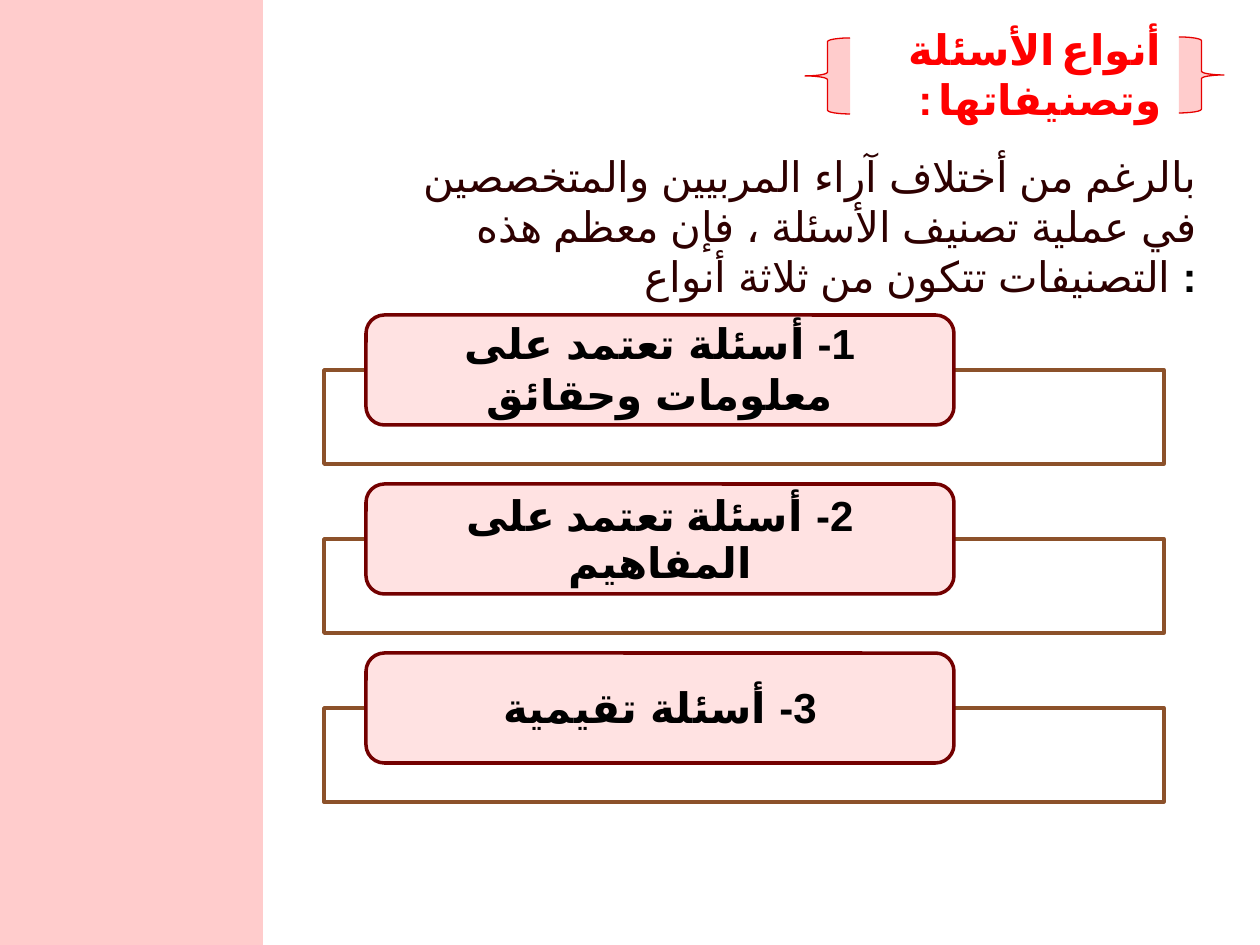
from pptx import Presentation
from pptx.dml.color import RGBColor
from pptx.enum.lang import MSO_LANGUAGE_ID as Language
from pptx.enum.shapes import MSO_SHAPE as Shape
from pptx.enum.text import MSO_ANCHOR as Anchor, MSO_AUTO_SIZE as AutoSize, PP_ALIGN as Align
from pptx.oxml.ns import qn
from pptx.util import Pt
from lxml.etree import SubElement

EMU_PER_PX = 914400 / 126
COLORS = {
    "background": "FFCCCC", "panel": "FFFFFF", "title": "FF0000", "body": "2E0000",
    "text": "000000", "frame": "8C512A", "label": "FFE2E2", "label_line": "730000",
    "brace_line": "E60000",
}
TITLE = ["أنواع", "الأسئلة", "وتصنيفاتها", ":"]
INTRO = ("بالرغم من أختلاف آراء المربيين والمتخصصين في عملية تصنيف الأسئلة ، "
         "فإن معظم هذه التصنيفات تتكون من ثلاثة أنواع ")
QUESTION_TYPES = [
    ["1-", "أسئلة", "تعتمد", "على", "معلومات", "وحقائق"],
    ["2-", "أسئلة تعتمد على", "المفاهيم"],
    ["3-", "أسئلة", "تقيمية"],
]


def px(value):
    return round(value * EMU_PER_PX)


def color(name):
    return RGBColor.from_string(COLORS[name])


def add_box(slide, kind, box, fill, line, width):
    shape = slide.shapes.add_shape(kind, *map(px, box))
    shape.shadow.inherit = False
    if fill:
        shape.fill.solid()
        shape.fill.fore_color.rgb = color(fill)
    else:
        shape.fill.background()
    shape.line.color.rgb = color(line)
    shape.line.width = Pt(width)
    return shape


def add_run(paragraph, text, size, color_name, bold, font_name="Arial"):
    run = paragraph.add_run()
    run.text = text
    font = run.font
    font.name, font.size, font.bold = font_name, Pt(size), bold
    font.language_id = Language.ARABIC
    font.color.rgb = color(color_name)
    # Arabic letters take the complex-script font
    SubElement(run._r.get_or_add_rPr(), qn("a:cs")).set("typeface", font_name)


def add_words(paragraph, words, color_name, space_size, space_font):
    """Bold words in a right-to-left line, with a plain space between them."""
    paragraph._p.get_or_add_pPr().set("rtl", "1")
    for index, word in enumerate(words):
        if index:
            add_run(paragraph, " ", space_size, color_name, False, space_font)
        add_run(paragraph, word, 24, color_name, True)


def add_panel(slide, box):
    panel = add_box(slide, Shape.RECTANGLE, box, "panel", "panel", 0.75)
    slide.shapes._spTree.insert(2, panel._element)  # behind the title


def add_heading(slide, left, top):
    # Title between two braces
    title = slide.shapes.title
    title.left, title.top, title.width, title.height = map(px, (left, top, 515, 63))
    frame = title.text_frame
    frame.word_wrap, frame.auto_size = True, AutoSize.NONE
    frame.vertical_anchor = Anchor.MIDDLE
    paragraph = frame.paragraphs[0]
    paragraph.alignment = Align.RIGHT
    add_words(paragraph, TITLE, "title", 16, "Calibri")
    for kind, x, y in ((Shape.LEFT_BRACE, 146, -4), (Shape.RIGHT_BRACE, 520, -5)):
        add_box(slide, kind, (left + x, top + y, 45, 76), "background", "brace_line", 0.75)


def add_intro(slide, box):
    frame = slide.shapes.add_textbox(*map(px, box)).text_frame
    frame.word_wrap = True
    paragraph = frame.paragraphs[0]
    paragraph.alignment = Align.RIGHT
    add_run(paragraph, INTRO, 24, "body", False)
    add_run(paragraph, ":", 24, "text", True)


def add_question_type(slide, left, top, words):
    # Wide frame with a rounded label over its upper edge
    add_box(slide, Shape.RECTANGLE, (left, top + 55, 840, 94), None, "frame", 2)
    label = add_box(slide, Shape.ROUNDED_RECTANGLE, (left + 42, top, 588, 110),
                    "label", "label_line", 2)
    frame = label.text_frame
    frame.word_wrap = True
    frame.vertical_anchor = Anchor.MIDDLE
    frame.margin_left = frame.margin_right = px(23)
    frame.margin_top = frame.margin_bottom = 0
    paragraph = frame.paragraphs[0]
    paragraph.alignment = Align.CENTER
    paragraph.line_spacing = 0.9
    add_words(paragraph, words, "text", 27, "Arial")


def main():
    presentation = Presentation()
    presentation.slide_width, presentation.slide_height = px(1260), px(945)
    slide = presentation.slides.add_slide(presentation.slide_layouts[5])
    slide.background.fill.solid()
    slide.background.fill.fore_color.rgb = color("background")
    add_panel(slide, (264, 0, 996, 945))
    add_heading(slide, 659, 42)
    add_intro(slide, (370, 144, 839, 152))
    for index, words in enumerate(QUESTION_TYPES):
        add_question_type(slide, 324, 315 + 169 * index, words)
    presentation.save("out.pptx")


if __name__ == "__main__":
    main()
